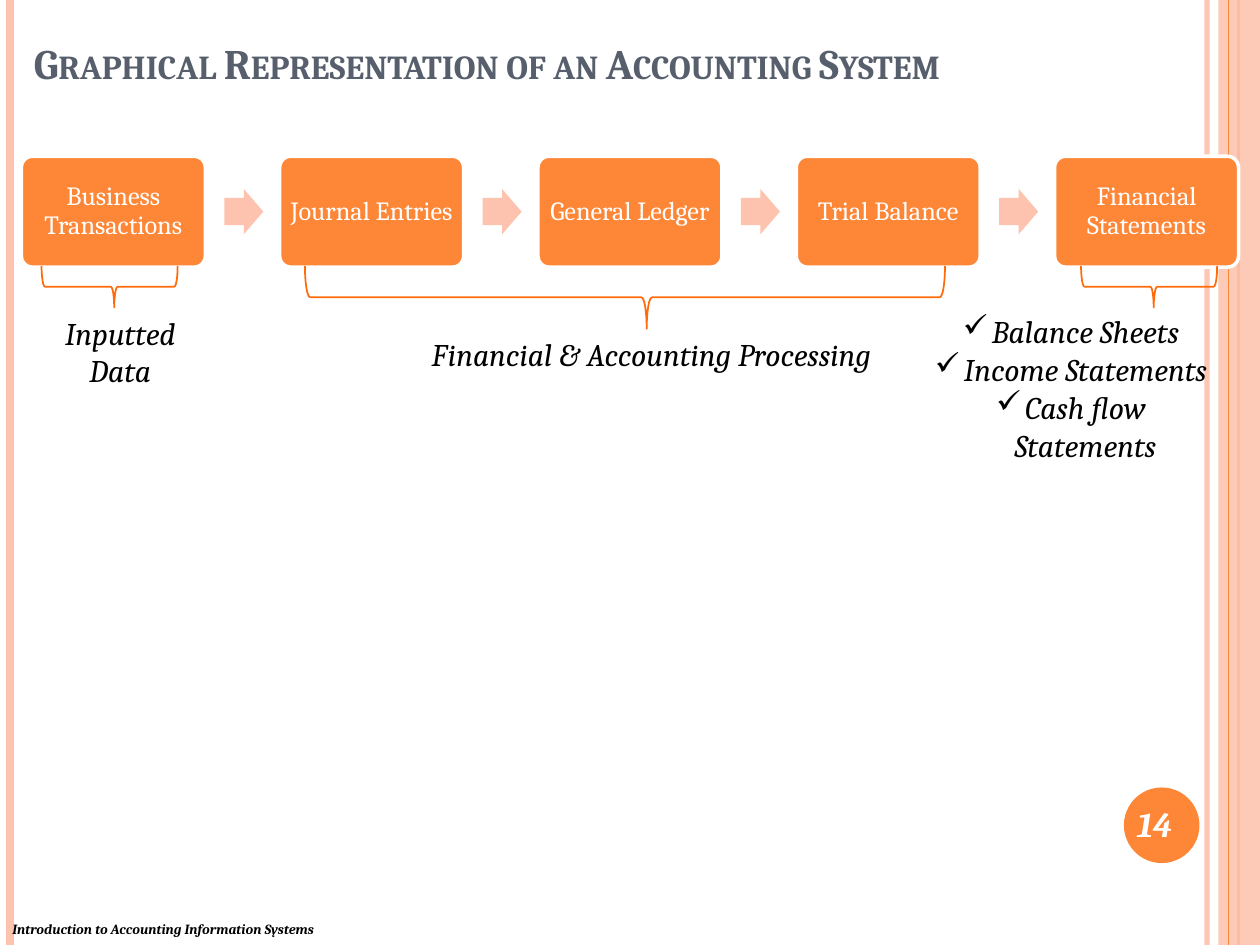
from lxml import etree
from pptx import Presentation
from pptx.dml.color import RGBColor
from pptx.enum import shapes, text
from pptx.oxml import ns
from pptx.util import Inches, Pt

FONT = "Cambria"
COLORS = {"orange": "FE8637", "peach": "FEC3AE", "brace": "FF6B0A",
          "title": "575F6D", "white": "FFFFFF", "black": "000000"}

TITLE = "Graphical Representation of an Accounting System"
FOOTER = "Introduction to Accounting Information Systems"
PAGE_NUMBER = "14"
STEPS = ["Business Transactions", "Journal Entries", "General Ledger",
         "Trial Balance", "Financial Statements"]

# x, colour, width in points, opacity in percent
RULES = [(9.58, "peach", 3, 93), (0.08, "peach", 4.5, 100), (9.83, "orange", 1.5, 100)]
INNER_RULE = (9.75, "orange", 0.75, 100)

# left, top, width, height of each brace as it appears
BRACES = [(0.33, 2.11, 1.08, 0.33), (2.42, 2.11, 5.08, 0.5), (8.58, 2.11, 1.08, 0.33)]
# lines, box, bulleted
LABELS = [
    (["Inputted Data"], (0.33, 2.44, 1.25, 0.71), False),
    (["Financial & Accounting Processing"], (3.17, 2.61, 4, 0.4), False),
    (["Balance Sheets", "Income Statements", "Cash flow Statements"],
     (7.25, 2.43, 2.5, 1.01), True),
]

STEP_LEFT, STEP_TOP, STEP_WIDTH, STEP_HEIGHT, STEP_PITCH = 0.17, 1.24, 1.46, 0.88, 2.05
ARROW_OFFSET, ARROW_WIDTH, ARROW_HEIGHT = 1.61, 0.31, 0.36
BULLET_INDENT = 0.23

presentation = Presentation()
presentation.slide_width, presentation.slide_height = Inches(10), Inches(7.5)
slide = presentation.slides.add_slide(presentation.slide_layouts[6])


def color(name):
    return RGBColor.from_string(COLORS[name])


def set_opacity(fill_parent, percent):
    rgb = fill_parent.find(".//" + ns.qn("a:srgbClr"))
    etree.SubElement(rgb, ns.qn("a:alpha"), val=str(percent * 1000))


def add_rule(x, color_name, width, opacity):
    rule = slide.shapes.add_connector(shapes.MSO_CONNECTOR.STRAIGHT,
                                      Inches(x), 0, Inches(x), Inches(7.5))
    rule.line.color.rgb = color(color_name)
    rule.line.width = Pt(width)
    properties = rule._element.spPr
    if opacity < 100:
        set_opacity(properties, opacity)
    etree.SubElement(properties, ns.qn("a:effectLst"))


def add_preset(kind, box, fill=None, line=None, line_width=1, adjustments=()):
    shape = slide.shapes.add_shape(kind, *map(Inches, box))
    shape.shadow.inherit = False
    for index, value in enumerate(adjustments):
        shape.adjustments[index] = value
    if fill:
        shape.fill.solid()
        shape.fill.fore_color.rgb = color(fill)
    else:
        shape.fill.background()
    if line:
        shape.line.color.rgb = color(line)
        shape.line.width = Pt(line_width)
    else:
        shape.line.fill.background()
    return shape


def write(frame, lines, size, color_name, bold=False, italic=False,
          align=text.PP_ALIGN.CENTER, anchor=text.MSO_ANCHOR.TOP):
    """Fill a text frame, one paragraph for each line."""
    frame.word_wrap = True
    frame.vertical_anchor = anchor
    for index, line in enumerate(lines):
        paragraph = frame.add_paragraph() if index else frame.paragraphs[0]
        paragraph.alignment = align
        run = paragraph.add_run()
        run.text = line
        font = run.font
        font.name, font.size, font.bold, font.italic = FONT, Pt(size), bold, italic
        font.color.rgb = color(color_name)
    return frame


def add_text(box, lines, size, color_name, **style):
    text_box = slide.shapes.add_textbox(*map(Inches, box))
    return write(text_box.text_frame, lines, size, color_name, **style)


def add_check_bullet(paragraph):
    properties = paragraph._p.get_or_add_pPr()
    properties.set("marL", str(Inches(BULLET_INDENT)))
    properties.set("indent", str(-Inches(BULLET_INDENT)))
    etree.SubElement(properties, ns.qn("a:buChar"), char="✓")


def add_brace(left, top, width, height):
    """Turn a left brace so that it opens upwards in the given box."""
    box = (left + (width - height) / 2, top + (height - width) / 2, height, width)
    brace = add_preset(shapes.MSO_SHAPE.LEFT_BRACE, box, line="brace",
                       adjustments=(0.083, 0.534))
    brace.rotation = 270


# Side bands and page number
for rule in RULES:
    add_rule(*rule)
band = add_preset(shapes.MSO_SHAPE.RECTANGLE, (9.67, 0, 0.33, 7.5), "peach")
set_opacity(band._element.spPr, 87)
add_rule(*INNER_RULE)
add_preset(shapes.MSO_SHAPE.OVAL, (8.92, 6.25, 0.6, 0.6), "orange")
add_text((8.83, 6.25, 0.67, 0.57), [PAGE_NUMBER], 20, "white", bold=True, italic=True,
         anchor=text.MSO_ANCHOR.MIDDLE)

# Title and footer
title = add_text((0.17, -0.08, 9.67, 0.83), [TITLE], 24, "title", bold=True,
                 align=text.PP_ALIGN.LEFT, anchor=text.MSO_ANCHOR.BOTTOM)
title.paragraphs[0].runs[0]._r.get_or_add_rPr().set("cap", "small")
add_text((0, 7.26, 10, 0.24), [FOOTER], 8, "black", bold=True, italic=True,
         align=text.PP_ALIGN.LEFT)

# Process steps
for index, step in enumerate(STEPS):
    left = STEP_LEFT + index * STEP_PITCH
    box = add_preset(shapes.MSO_SHAPE.ROUNDED_RECTANGLE,
                     (left, STEP_TOP, STEP_WIDTH, STEP_HEIGHT),
                     "orange", "white", 2, (0.1,))
    frame = write(box.text_frame, [step], 15, "white", anchor=text.MSO_ANCHOR.MIDDLE)
    frame.margin_left = frame.margin_right = Inches(0.05)
    frame.paragraphs[0].line_spacing = 0.9
    if index < len(STEPS) - 1:
        arrow_top = STEP_TOP + (STEP_HEIGHT - ARROW_HEIGHT) / 2
        add_preset(shapes.MSO_SHAPE.RIGHT_ARROW,
                   (left + ARROW_OFFSET, arrow_top, ARROW_WIDTH, ARROW_HEIGHT),
                   "peach", adjustments=(0.6, 0.5))

# Braces and their labels
for brace_box in BRACES:
    add_brace(*brace_box)
for lines, label_box, bulleted in LABELS:
    label = add_text(label_box, lines, 18, "black", italic=True)
    if bulleted:
        for paragraph in label.paragraphs:
            add_check_bullet(paragraph)

presentation.save("out.pptx")
